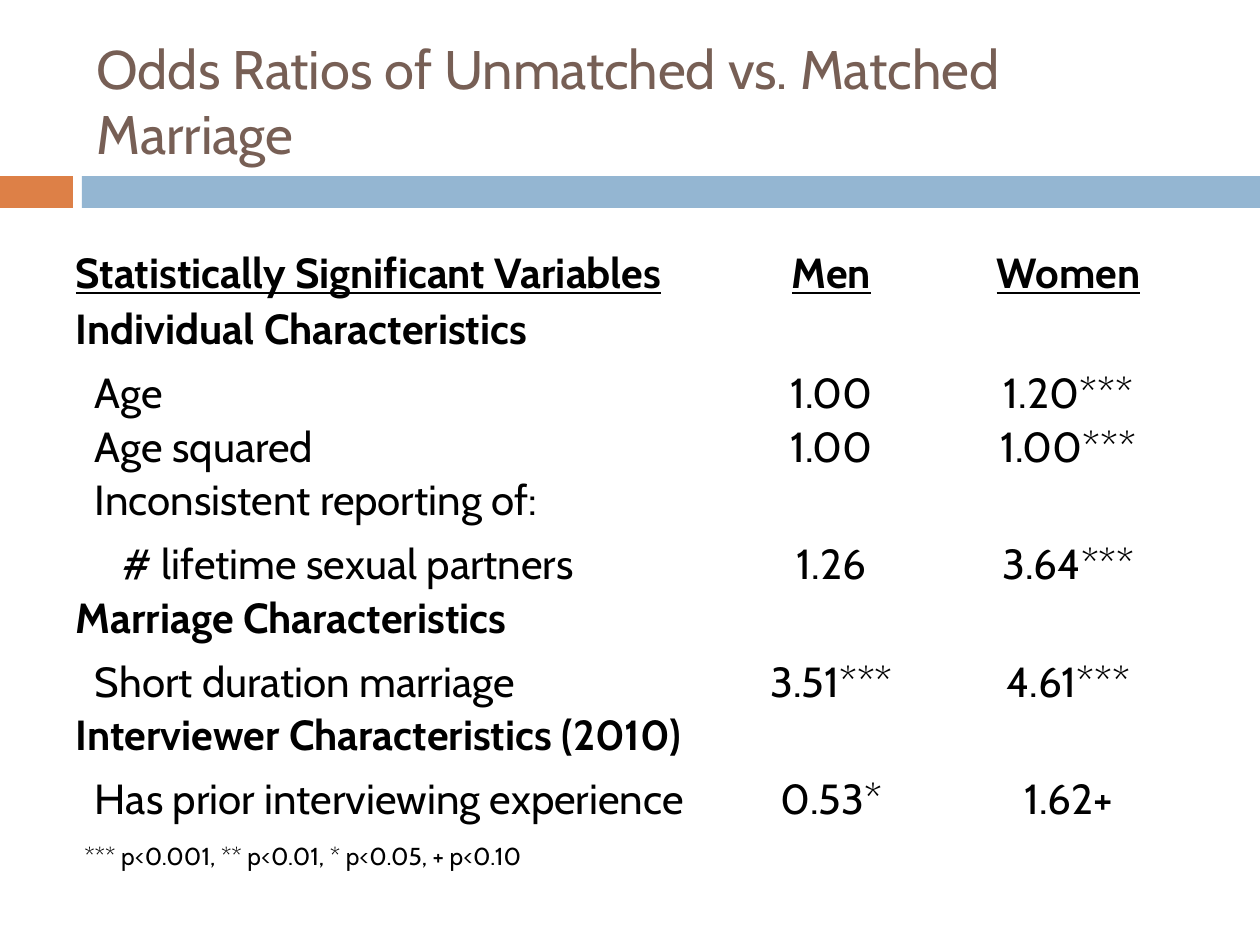
import pptx
import pptx.util
import pptx.dml.color
import pptx.enum.shapes
import pptx.enum.text

ALIGN = pptx.enum.text.PP_ALIGN
ANCHOR = pptx.enum.text.MSO_ANCHOR
COLORS = {"title": "775F55", "text": "000000", "accent": "DD8047", "band": "94B6D2"}
PX = 914400 / 126


def px(*lengths):
    return [round(n * PX) for n in lengths]


def write(tf, text, size=24, color="text", bold=False, underline=False,
          align=ALIGN.LEFT, spacing=1.0):
    p = tf.paragraphs[0]
    p.alignment = align
    p.line_spacing = spacing
    r = p.add_run()
    r.text = text
    r.font.name = "Cabin"
    r.font.size = pptx.util.Pt(size)
    r.font.bold = bold
    r.font.underline = underline
    r.font.color.rgb = pptx.dml.color.RGBColor.from_string(COLORS[color])


prs = pptx.Presentation()
prs.slide_width, prs.slide_height = px(1260, 945)
s = prs.slides.add_slide(prs.slide_layouts[5])

# Bars under the title
for left, width, color in [(0, 73, "accent"), (82, 1178, "band")]:
    bar = s.shapes.add_shape(pptx.enum.shapes.MSO_SHAPE.RECTANGLE,
                             *px(left, 176, width, 32))
    bar.shadow.inherit = False
    bar.fill.solid()
    bar.fill.fore_color.rgb = pptx.dml.color.RGBColor.from_string(COLORS[color])
    bar.line.fill.background()

# Title
title = s.shapes.title
title.left, title.top, title.width, title.height = px(84, 32, 1124, 136)
title.text_frame.auto_size = pptx.enum.text.MSO_AUTO_SIZE.NONE
title.text_frame.vertical_anchor = ANCHOR.MIDDLE
write(title.text_frame, "Odds Ratios of Unmatched vs. Matched Marriage",
      size=31, color="title")

# Odds ratios: indent of the label, then label, men, women
rows = [
    (0, "Statistically Significant Variables", "Men", "Women"),
    (0, "Individual Characteristics", "", ""),
    (19, "Age", "1.00", "1.20***"),
    (19, "Age squared", "1.00", "1.00***"),
    (19, "Inconsistent reporting of:", "", ""),
    (47, "# lifetime sexual partners", "1.26", "3.64***"),
    (0, "Marriage Characteristics", "", ""),
    (19, "Short duration marriage", "3.51***", "4.61***"),
    (0, "Interviewer Characteristics (2010)", "", ""),
    (19, "Has prior interviewing experience", "0.53*", "1.62+"),
]
table = s.shapes.add_table(len(rows), 3, *px(63, 242, 1124, 574)).table
table.first_row = False
table.horz_banding = False
for column, width in zip(table.columns, px(650, 237, 237)):
    column.width = width

for i, (indent, *texts) in enumerate(rows):
    header = i == 0
    tall = header or not texts[1]
    table.rows[i].height = px(64 if tall else 53)[0]
    for j, text in enumerate(texts):
        cell = table.cell(i, j)
        cell.fill.background()
        if j == 0:
            cell.margin_left = px(13 + indent)[0]
        if text:
            write(cell.text_frame, text, bold=indent == 0 and (header or j == 0),
                  underline=header, align=ALIGN.CENTER if j else ALIGN.LEFT,
                  spacing=1.0 if header else 0.8)

# Significance levels
note = s.shapes.add_textbox(*px(72, 835, 493, 43))
note.text_frame.word_wrap = False
note.text_frame.auto_size = pptx.enum.text.MSO_AUTO_SIZE.SHAPE_TO_FIT_TEXT
write(note.text_frame, "*** p<0.001, ** p<0.01, * p<0.05, + p<0.10", size=14)

prs.save("out.pptx")
